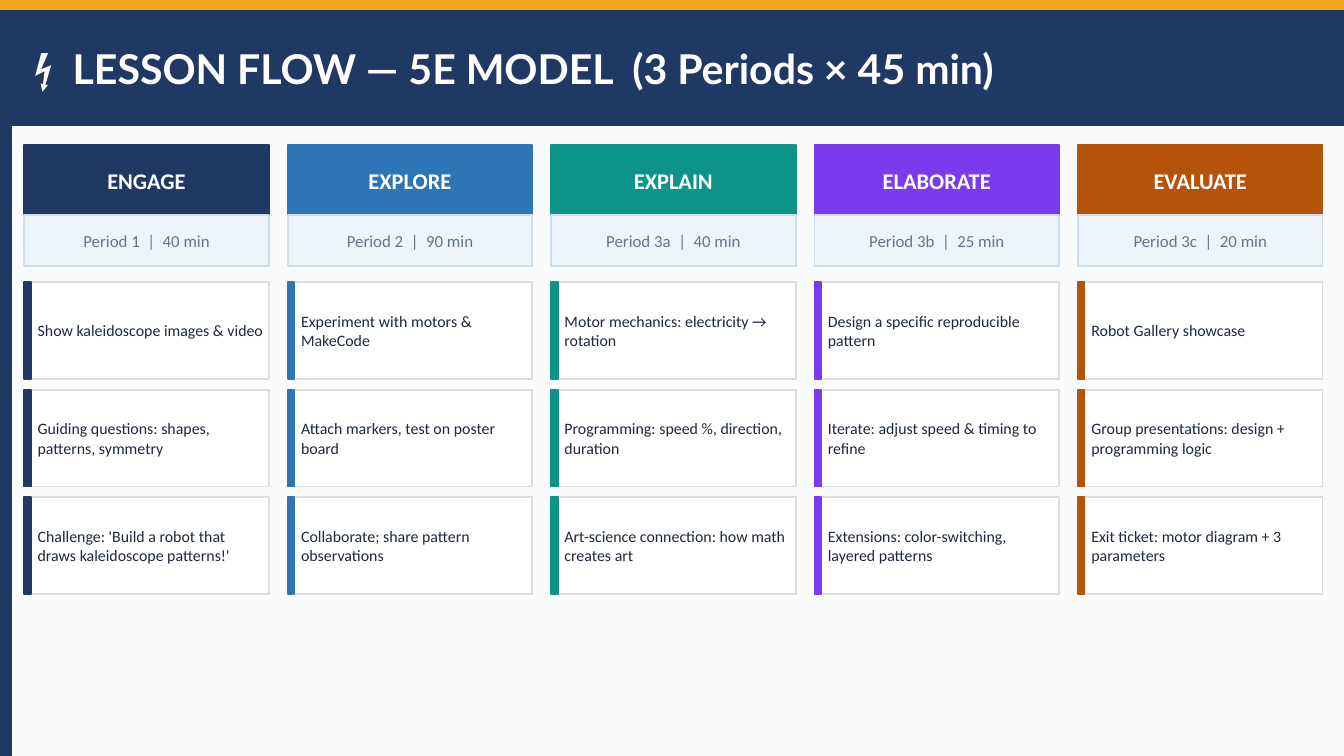
from pptx import Presentation
from pptx.dml.color import RGBColor
from pptx.enum.shapes import MSO_SHAPE
from pptx.enum.text import MSO_ANCHOR, PP_ALIGN
from pptx.util import Inches, Pt

SLIDE_W = 10
SLIDE_H = SLIDE_W * 9 / 16

COLORS = {
    "background": "F8FAFC",
    "accent": "F4A522",
    "navy": "1F3864",
    "blue": "2E75B6",
    "teal": "0D9488",
    "violet": "7C3AED",
    "rust": "B45309",
    "white": "FFFFFF",
    "period_fill": "EEF4FB",
    "period_line": "CCDDEE",
    "card_line": "DDDDDD",
    "muted": "64748B",
    "ink": "1E293B",
}

PHASES = [
    ("ENGAGE", "navy", "Period 1  |  40 min", [
        "Show kaleidoscope images & video",
        "Guiding questions: shapes, patterns, symmetry",
        "Challenge: 'Build a robot that draws kaleidoscope patterns!'",
    ]),
    ("EXPLORE", "blue", "Period 2  |  90 min", [
        "Experiment with motors & MakeCode",
        "Attach markers, test on poster board",
        "Collaborate; share pattern observations",
    ]),
    ("EXPLAIN", "teal", "Period 3a  |  40 min", [
        "Motor mechanics: electricity → rotation",
        "Programming: speed %, direction, duration",
        "Art-science connection: how math creates art",
    ]),
    ("ELABORATE", "violet", "Period 3b  |  25 min", [
        "Design a specific reproducible pattern",
        "Iterate: adjust speed & timing to refine",
        "Extensions: color-switching, layered patterns",
    ]),
    ("EVALUATE", "rust", "Period 3c  |  20 min", [
        "Robot Gallery showcase",
        "Group presentations: design + programming logic",
        "Exit ticket: motor diagram + 3 parameters",
    ]),
]


def rgb(name):
    return RGBColor.from_string(COLORS[name])


def add_rect(s, x, y, w, h, fill, line=None):
    sp = s.shapes.add_shape(MSO_SHAPE.RECTANGLE, Inches(x), Inches(y), Inches(w), Inches(h))
    sp.shadow.inherit = False
    sp.fill.solid()
    sp.fill.fore_color.rgb = rgb(fill)
    sp.line.color.rgb = rgb(line or fill)
    sp.line.width = Pt(1)


def add_text(s, x, y, w, h, text, size, color, font="Calibri", bold=False, align=PP_ALIGN.LEFT):
    tf = s.shapes.add_textbox(Inches(x), Inches(y), Inches(w), Inches(h)).text_frame
    tf.word_wrap = True
    tf.vertical_anchor = MSO_ANCHOR.MIDDLE
    tf.margin_left = tf.margin_right = tf.margin_top = tf.margin_bottom = 0
    p = tf.paragraphs[0]
    p.alignment = align
    r = p.add_run()
    r.text = text
    r.font.name = font
    r.font.size = Pt(size)
    r.font.bold = bold
    r.font.color.rgb = rgb(color)


def add_frame(s, w, h, band):
    add_rect(s, 0, 0, w, band, "accent")
    add_rect(s, 0, band, band, h - band, "navy")


def add_header(s, x, y, w, h, title):
    add_rect(s, x, y, w, h, "navy")
    add_text(s, x + 0.17, y, w - 0.42, h, title, 22, "white", font="Lato", bold=True)


def add_card(s, x, y, w, h, color, text):
    add_rect(s, x, y, w, h, "white", "card_line")
    add_rect(s, x, y, 0.05, h, color)
    add_text(s, x + 0.1, y, w - 0.14, h, text, 8.5, "ink")


def add_phase(s, x, y, w, name, color, period, activities):
    name_h, period_h, card_h, card_gap = 0.52, 0.38, 0.72, 0.08
    add_rect(s, x, y, w, name_h, color)
    add_text(s, x, y, w, name_h, name, 12, "white", bold=True, align=PP_ALIGN.CENTER)
    period_y = y + name_h
    add_rect(s, x, period_y, w, period_h, "period_fill", "period_line")
    add_text(s, x, period_y, w, period_h, period, 9, "muted", align=PP_ALIGN.CENTER)
    cards_y = period_y + period_h + 0.12
    for row, activity in enumerate(activities):
        add_card(s, x, cards_y + row * (card_h + card_gap), w, card_h, color, activity)


def add_phases(s, x, y, w, gap=0.14):
    phase_w = (w - gap * (len(PHASES) - 1)) / len(PHASES)
    for col, phase in enumerate(PHASES):
        add_phase(s, x + col * (phase_w + gap), y, phase_w, *phase)


def main():
    prs = Presentation()
    prs.slide_width, prs.slide_height = Inches(SLIDE_W), Inches(SLIDE_H)
    s = prs.slides.add_slide(prs.slide_layouts[6])
    s.background.fill.solid()
    s.background.fill.fore_color.rgb = rgb("background")
    add_frame(s, SLIDE_W, SLIDE_H, 0.08)
    add_header(s, 0.08, 0.08, 9.92, 0.85, "⚡  LESSON FLOW — 5E MODEL  (3 Periods × 45 min)")
    add_phases(s, 0.18, 1.08, 9.66)
    prs.save("out.pptx")


if __name__ == "__main__":
    main()
